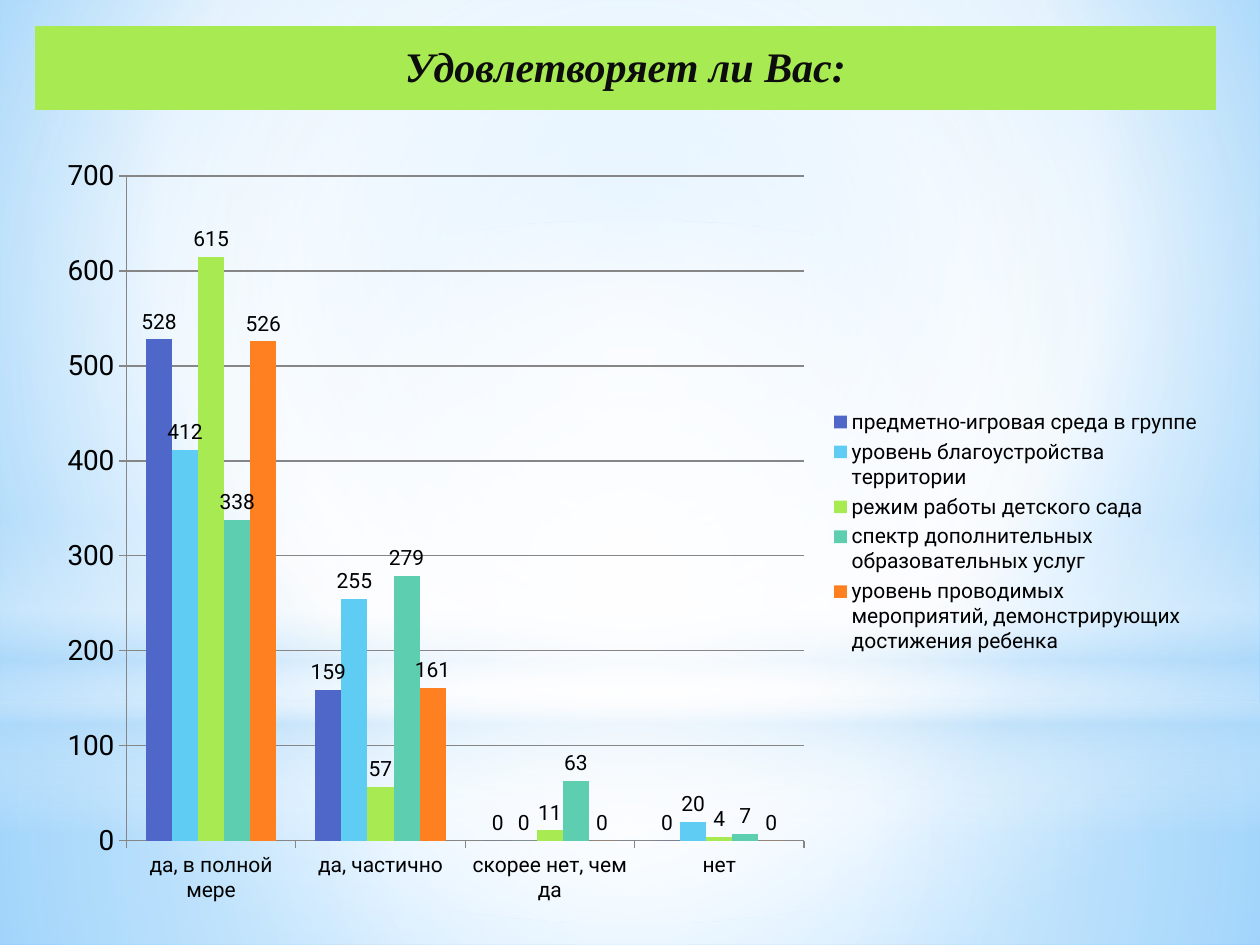
from dataclasses import dataclass

from lxml import etree
from pptx import Presentation
from pptx.chart.data import CategoryChartData
from pptx.dml.color import RGBColor
from pptx.enum.chart import XL_CHART_TYPE, XL_LABEL_POSITION, XL_LEGEND_POSITION, XL_TICK_MARK
from pptx.enum.shapes import MSO_SHAPE
from pptx.enum.text import MSO_ANCHOR, PP_ALIGN
from pptx.oxml.ns import qn
from pptx.util import Cm, Pt

RECT, OVAL = MSO_SHAPE.RECTANGLE, MSO_SHAPE.OVAL
CLUSTER = XL_CHART_TYPE.COLUMN_CLUSTERED
ABOVE = XL_LABEL_POSITION.OUTSIDE_END
RIGHT = XL_LEGEND_POSITION.RIGHT
TICK_OUT = XL_TICK_MARK.OUTSIDE
MIDDLE, CENTER = MSO_ANCHOR.MIDDLE, PP_ALIGN.CENTER

BLACK = RGBColor(0x00, 0x00, 0x00)
INK = RGBColor(0x0D, 0x0D, 0x0D)
WHITE = RGBColor(0xFF, 0xFF, 0xFF)
GRAY = RGBColor(0x86, 0x86, 0x86)
PALE = RGBColor(0xB4, 0xDC, 0xFA)
MIST = RGBColor(0x9E, 0xD5, 0xFF)
AZURE = RGBColor(0x5B, 0xB9, 0xFF)
BLUE = RGBColor(0x4E, 0x67, 0xC8)
SKY = RGBColor(0x5E, 0xCC, 0xF3)
LIME = RGBColor(0xA7, 0xEA, 0x52)
TEAL = RGBColor(0x5D, 0xCE, 0xAF)
ORANGE = RGBColor(0xFF, 0x80, 0x21)

WIDTH, HEIGHT = 25.4, 19.05
NO_STYLE = "{2D5ABB26-0587-4C30-8999-92F81FD0307C}"
TITLE = "Удовлетворяет ли Вас:"
GROUPS = ["да, в полной мере", "да, частично", "скорее нет, чем да", "нет"]


@dataclass
class Stop:
    pos: int
    color: RGBColor
    alpha: int = 100


@dataclass
class Glow:
    """A gradient: round towards the focus insets, or top-down without them."""
    stops: list[Stop]
    focus: tuple[int, ...] = ()


@dataclass
class Layer:
    kind: MSO_SHAPE
    top: float
    height: float
    glow: Glow


@dataclass
class Row:
    name: str
    vals: tuple[int, ...]
    color: RGBColor


MID = (50, 50, 50, 50)
BACK = Glow([Stop(0, MIST), Stop(60, WHITE), Stop(100, AZURE)], (20, 10, 20, 60))
LAYERS = [
    Layer(RECT, 14.17, 4.88, Glow(
        [Stop(0, WHITE, 91), Stop(37, WHITE, 76), Stop(100, PALE, 79)], MID)),
    Layer(RECT, 0, 14.17, Glow(
        [Stop(0, WHITE, 89), Stop(48, WHITE, 62), Stop(100, PALE, 79)], MID)),
    Layer(RECT, 10.46, 6.35, Glow(
        [Stop(0, WHITE, 0), Stop(29, WHITE, 30), Stop(45, PALE, 40),
         Stop(55, WHITE, 26), Stop(65, PALE, 60), Stop(100, WHITE, 0)])),
    Layer(OVAL, 4.45, 14.17, Glow([Stop(0, WHITE), Stop(56, WHITE, 0)], MID)),
]
ROWS = [
    Row("предметно-игровая среда в группе", (528, 159, 0, 0), BLUE),
    Row("уровень благоустройства территории", (412, 255, 0, 20), SKY),
    Row("режим работы детского сада", (615, 57, 11, 4), LIME),
    Row("спектр дополнительных образовательных услуг", (338, 279, 63, 7), TEAL),
    Row("уровень проводимых мероприятий, демонстрирующих достижения ребенка",
        (526, 161, 0, 0), ORANGE),
]


def apply(item, **values) -> None:
    for name, value in values.items():
        setattr(item, name, value)


def blend(root, glow: Glow) -> None:
    """Swap the first solid fill under root for a gradient."""
    solid = next(root.iter(qn("a:solidFill")))
    grad = etree.Element(qn("a:gradFill"), rotWithShape="1")
    stops = etree.SubElement(grad, qn("a:gsLst"))
    for stop in glow.stops:
        mark = etree.SubElement(stops, qn("a:gs"), pos=str(stop.pos * 1000))
        color = etree.SubElement(mark, qn("a:srgbClr"), val=str(stop.color))
        if stop.alpha < 100:
            etree.SubElement(color, qn("a:alpha"), val=str(stop.alpha * 1000))
    if glow.focus:
        path = etree.SubElement(grad, qn("a:path"), {"path": "circle"})
        sides = {side: str(inset * 1000) for side, inset in zip("ltrb", glow.focus)}
        etree.SubElement(path, qn("a:fillToRect"), sides)
    else:
        etree.SubElement(grad, qn("a:lin"), ang="5400000", scaled="0")
    solid.getparent().replace(solid, grad)


def add_layer(slide, layer: Layer) -> None:
    shape = slide.shapes.add_shape(
        layer.kind, Cm(0), Cm(layer.top), Cm(WIDTH), Cm(layer.height))
    shape.shadow.inherit = False
    shape.line.fill.background()
    shape.fill.solid()
    blend(shape._element.spPr, layer.glow)


def add_title(slide) -> None:
    table = slide.shapes.add_table(1, 1, Cm(0.71), Cm(0.53), Cm(23.8), Cm(1.68)).table
    table._tbl.tblPr.find(qn("a:tableStyleId")).text = NO_STYLE
    cell = table.cell(0, 0)
    cell.fill.solid()
    cell.fill.fore_color.rgb = LIME
    apply(cell, vertical_anchor=MIDDLE, margin_left=Cm(0.03), margin_right=Cm(0.03),
          margin_top=Cm(0.03), margin_bottom=Cm(0))
    para = cell.text_frame.paragraphs[0]
    para.alignment = CENTER
    run = para.add_run()
    run.text = TITLE
    apply(run.font, name="Times New Roman", size=Pt(24), bold=True, italic=True)
    run.font.color.rgb = INK


def add_bars(slide) -> None:
    data = CategoryChartData(number_format="General")
    data.categories = GROUPS
    for row in ROWS:
        data.add_series(row.name, row.vals)
    chart = slide.shapes.add_chart(
        CLUSTER, Cm(0.89), Cm(2.92), Cm(23.6), Cm(15.6), data).chart
    apply(chart, has_title=False, has_legend=True)
    apply(chart.font, name="Roboto", size=Pt(18))
    chart.font.color.rgb = BLACK
    apply(chart.legend, position=RIGHT, include_in_layout=False)
    chart.legend.font.size = Pt(12)

    cats, vals = chart.category_axis, chart.value_axis
    apply(vals, minimum_scale=0, maximum_scale=700, major_unit=100,
          has_major_gridlines=True)
    for axis, size in ((cats, 12), (vals, 16)):
        axis.major_tick_mark = TICK_OUT
        axis.tick_labels.font.size = Pt(size)
    for line in (cats.format.line, vals.format.line, vals.major_gridlines.format.line):
        line.color.rgb = GRAY
        line.width = Pt(0.75)

    plot = chart.plots[0]
    apply(plot, gap_width=150, overlap=0, vary_by_categories=False)
    for bars, row in zip(plot.series, ROWS):
        bars.format.fill.solid()
        bars.format.fill.fore_color.rgb = row.color
        apply(bars.data_labels, show_value=True, position=ABOVE)
        bars.data_labels.font.size = Pt(12)


def main() -> None:
    deck = Presentation()
    apply(deck, slide_width=Cm(WIDTH), slide_height=Cm(HEIGHT))
    slide = deck.slides.add_slide(deck.slide_layouts[6])
    slide.background.fill.solid()
    blend(slide._element, BACK)
    for layer in LAYERS:
        add_layer(slide, layer)
    add_title(slide)
    add_bars(slide)
    deck.save("out.pptx")


if __name__ == "__main__":
    main()
